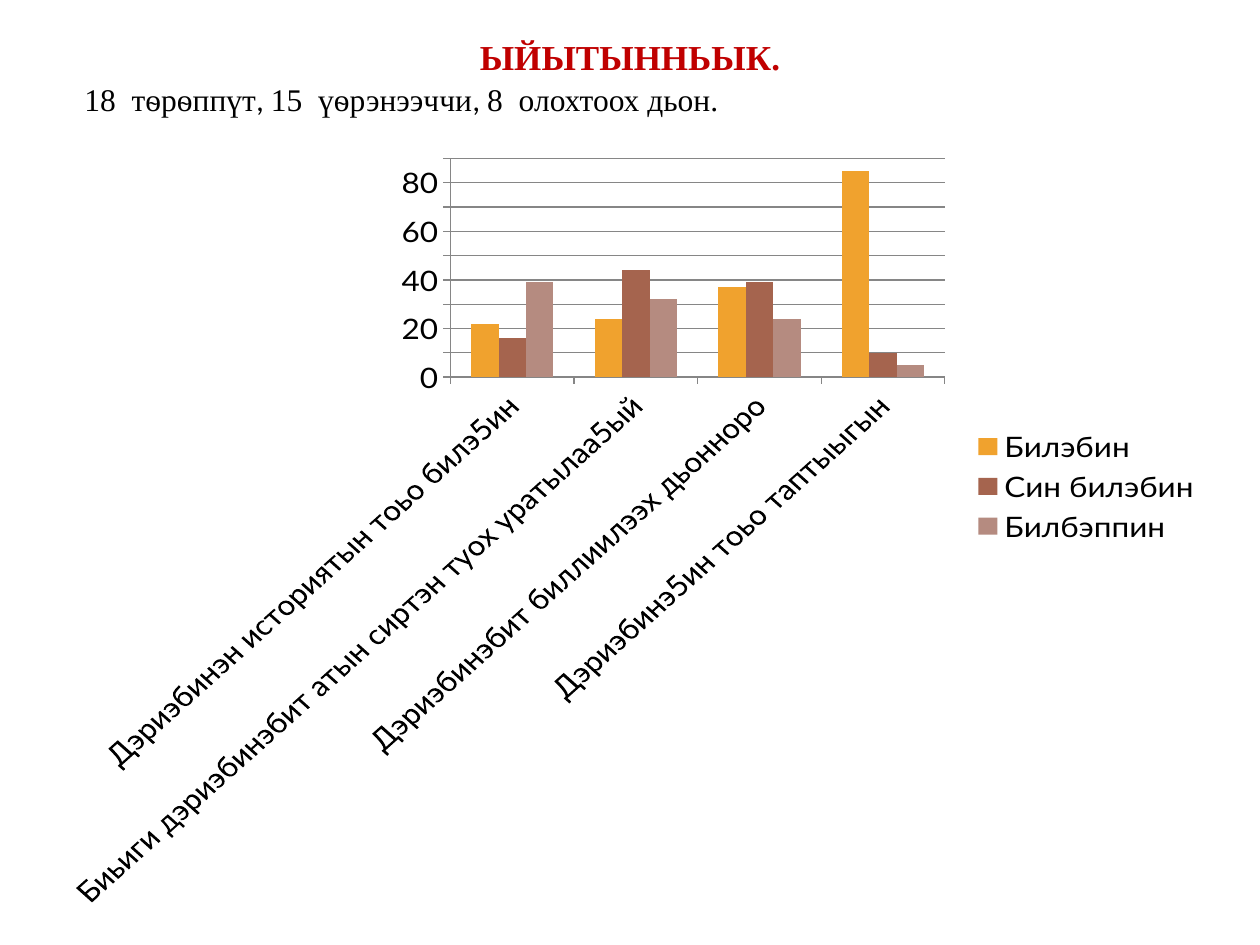
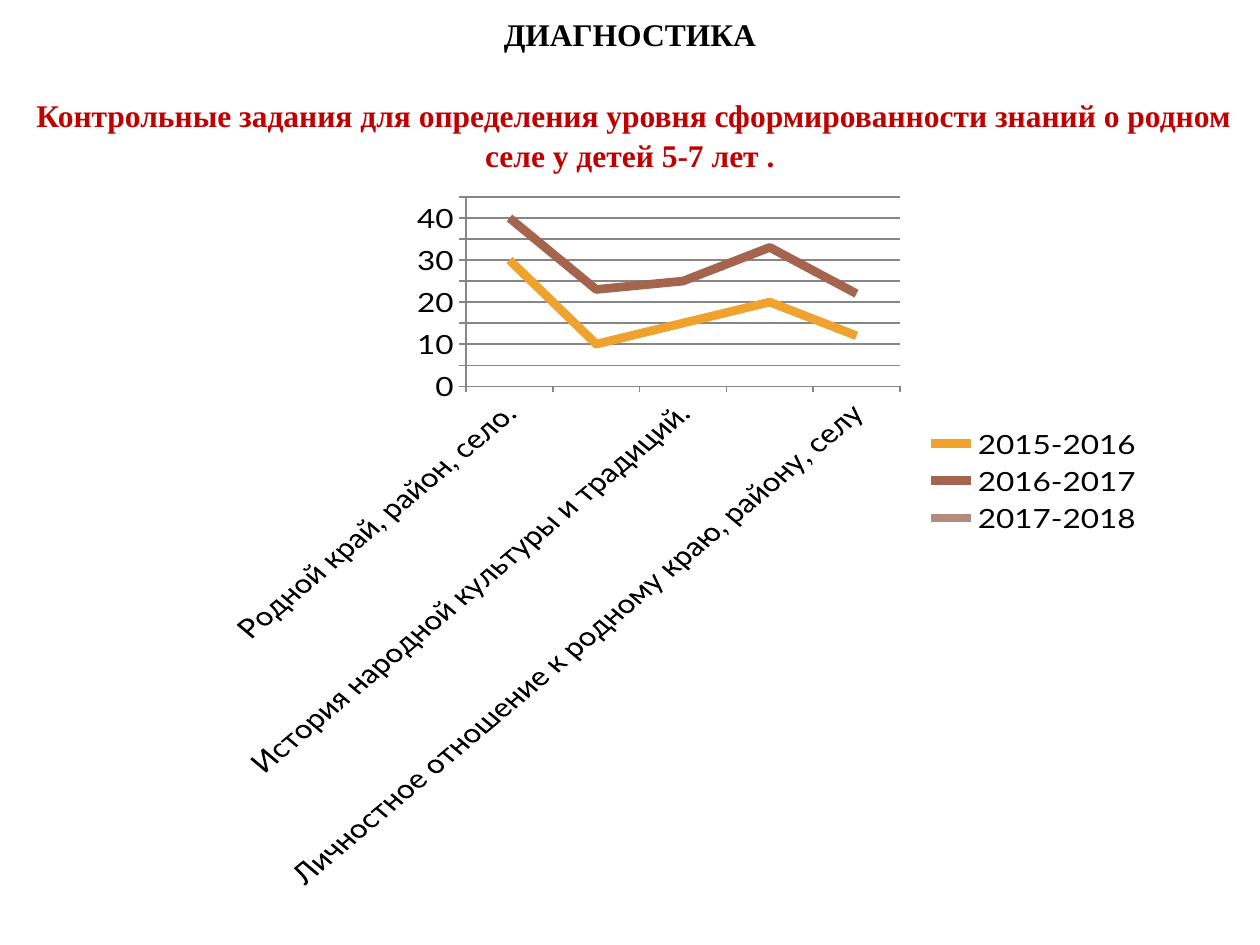
from pptx import Presentation
from pptx.chart.data import CategoryChartData
from pptx.dml.color import RGBColor
from pptx.enum.chart import XL_CHART_TYPE as ChartType
from pptx.enum.chart import XL_LEGEND_POSITION as LegendPosition
from pptx.enum.chart import XL_TICK_MARK as TickMark
from pptx.enum.text import PP_ALIGN as Align
from pptx.util import Inches, Pt

COLORS = {"text": "000000", "accent": "C00000", "page": "FFFFFF", "grid": "868686"}
SERIES_COLORS = ["F0A22E", "A5644E", "B58B80"]
TITLE_FONT, BODY_FONT, CHART_FONT = "Times New Roman", "Calibri", "Lato"


def rgb(name):
    return RGBColor.from_string(COLORS.get(name, name))


class SlideBuilder:
    """Holds the shared style and the slide being built."""

    def __init__(self, deck):
        self.deck = deck
        self.page = None

    def new_page(self):
        self.page = self.deck.slides.add_slide(self.deck.slide_layouts[6])
        fill = self.page.background.fill
        fill.solid()
        fill.fore_color.rgb = rgb("page")

    def text_box(self, left, top, width, height):
        box = self.page.shapes.add_textbox(
            Inches(left), Inches(top), Inches(width), Inches(height))
        box.text_frame.word_wrap = True
        return box.text_frame

    def paragraph(self, frame, spans, first=False, align=Align.LEFT, before=0):
        para = frame.paragraphs[0] if first else frame.add_paragraph()
        para.alignment = align
        para.line_spacing = 1.07
        para.space_before = Pt(before)
        for span in spans:
            self.span(para, *span)

    def span(self, para, text, font=TITLE_FONT, size=18, color="text", bold=False):
        run = para.add_run()
        run.text = text
        run.font.name = font
        run.font.size = Pt(size)
        run.font.bold = bold
        run.font.color.rgb = rgb(color)

    def chart(self, kind, place, categories, series, top_value, step):
        data = CategoryChartData()
        data.categories = categories
        for name, values in series.items():
            data.add_series(name, values)
        frame = self.page.shapes.add_chart(kind, *map(Inches, place), data)
        chart = frame.chart
        chart.has_title = False
        chart.font.name = CHART_FONT
        chart.font.size = Pt(18)
        chart.font.color.rgb = rgb("text")
        chart.has_legend = True
        chart.legend.position = LegendPosition.RIGHT
        chart.legend.include_in_layout = False

        # Axes and grid
        scale = chart.value_axis
        scale.minimum_scale, scale.maximum_scale = 0, top_value
        scale.major_unit = step
        scale.has_major_gridlines = True
        lines = [scale.major_gridlines.format.line]
        for axis in (scale, chart.category_axis):
            axis.major_tick_mark = TickMark.OUTSIDE
            axis.minor_tick_mark = TickMark.NONE
            lines.append(axis.format.line)
        for line in lines:
            line.color.rgb = rgb("grid")
            line.width = Pt(0.75)

        # Series
        plot = chart.plots[0]
        plot.vary_by_categories = False
        for item, color in zip(plot.series, SERIES_COLORS):
            if kind == ChartType.LINE:
                item.smooth = False
                item.format.line.color.rgb = rgb(color)
                item.format.line.width = Pt(5)
            else:
                item.format.fill.solid()
                item.format.fill.fore_color.rgb = rgb(color)
        return plot


def survey_slide(builder):
    builder.new_page()
    plot = builder.chart(
        ChartType.COLUMN_CLUSTERED, (0.35, 1.15, 9.29, 6.06),
        ["Дэриэбинэн историятын тоьо билэ5ин",
         "Биьиги дэриэбинэбит атын сиртэн туох уратылаа5ый",
         "Дэриэбинэбит биллиилээх дьонноро",
         "Дэриэбинэ5ин тоьо таптыыгын"],
        {"Билэбин": [22, 24, 37, 85],
         "Син билэбин": [16, 44, 39, 10],
         "Билбэппин": [39, 32, 24, 5]},
        top_value=90, step=10)
    plot.gap_width = 150
    plot.overlap = 0

    # Heading and respondents
    frame = builder.text_box(0.51, 0.21, 8.98, 1.11)
    builder.paragraph(frame, [("ЫЙЫТЫННЬЫК.", TITLE_FONT, 20, "accent", True)],
                      first=True, align=Align.CENTER)
    builder.paragraph(frame, [
        (" 18  тѳрѳппүт",), (", ", BODY_FONT),
        ("15  үѳрэнээччи",), (", ", BODY_FONT),
        ("8  олохтоох дьон.",)])


def diagnostics_slide(builder):
    builder.new_page()

    # Heading and subject
    frame = builder.text_box(0.12, 0.05, 9.76, 2.05)
    builder.paragraph(frame, [("ДИАГНОСТИКА", TITLE_FONT, 18, "text", True)],
                      first=True, align=Align.CENTER)
    subject = (" Контрольные задания для определения уровня сформированности "
               "знаний о родном селе у детей 5-7 лет .")
    builder.paragraph(frame, [(subject, TITLE_FONT, 18, "accent", True)],
                      align=Align.CENTER, before=23)

    builder.chart(
        ChartType.LINE, (0.83, 1.47, 8.35, 5.59),
        ["Родной край, район, село.",
         "Символика родного края, района.",
         "История народной культуры и традиций.",
         "Историко- географический и природный компоненты родного края, района, села.",
         "Личностное отношение к родному краю, району, селу"],
        {"2015-2016": [30, 10, 15, 20, 12],
         "2016-2017": [40, 23, 25, 33, 22],
         "2017-2018": [None] * 5},
        top_value=45, step=5)


def main():
    deck = Presentation()
    deck.slide_width, deck.slide_height = Inches(10), Inches(7.5)
    builder = SlideBuilder(deck)
    survey_slide(builder)
    diagnostics_slide(builder)
    deck.save("out.pptx")


if __name__ == "__main__":
    main()
